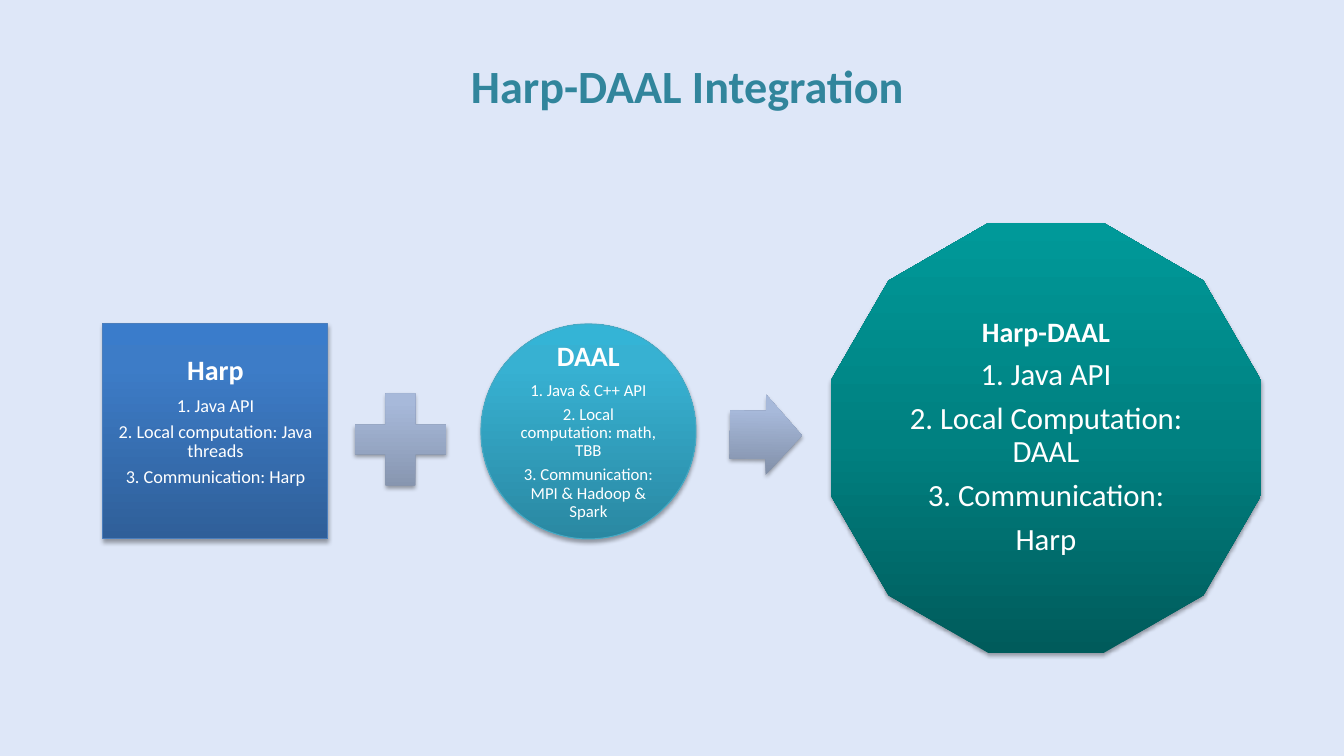
import pptx
import pptx.util
import pptx.dml.color
import pptx.enum.shapes
import pptx.enum.text
import pptx.oxml
import pptx.oxml.ns
from lxml import etree

RGB = pptx.dml.color.RGBColor
KIND = pptx.enum.shapes.MSO_SHAPE
Pt = pptx.util.Pt

# Colours
PALE = RGB(0xDE, 0xE7, 0xF8)
TEAL = RGB(0x31, 0x85, 0x9C)
WHITE = RGB(0xFF, 0xFF, 0xFF)
NAVY = RGB(0x4B, 0x7E, 0xBC)
AQUA = RGB(0x46, 0xAA, 0xC5)

# Gradient stops from bottom to top: percent, colour
BLUE = [(0, RGB(0x2F, 0x5F, 0x99)), (80, RGB(0x3D, 0x7C, 0xC7)), (100, RGB(0x3A, 0x7C, 0xCB))]
CYAN = [(0, RGB(0x2A, 0x88, 0xA2)), (80, RGB(0x37, 0xB1, 0xD2)), (100, RGB(0x34, 0xB4, 0xD6))]
GREY = [(0, RGB(0x81, 0x8F, 0xA8)), (80, RGB(0xA7, 0xB9, 0xDA)), (100, RGB(0xA7, 0xBA, 0xDC))]
GREEN = [(0, RGB(0x00, 0x5B, 0x5B)), (50, RGB(0x00, 0x81, 0x81)), (100, RGB(0x00, 0x99, 0x99))]

# Content
TITLE = "Harp-DAAL Integration"
HARP = ["Harp", "1. Java API", "2. Local computation: Java threads", "3. Communication: Harp"]
DAAL = ["DAAL", "1. Java & C++ API", "2. Local computation: math, TBB",
        "3. Communication: MPI & Hadoop & Spark"]
BOTH = ["Harp-DAAL", "1. Java API", "2. Local Computation: DAAL", "3. Communication:", "Harp"]

# Parts: kind, box in px, gradient, line colour, lines, body size, bottom inset in px
PARTS = [
    (KIND.RECTANGLE, (103, 324, 225, 215), BLUE, NAVY, HARP, 13, 22),
    (KIND.MATH_PLUS, (338, 377, 125, 125), GREY, None, [], 0, 3),
    (KIND.OVAL, (481, 324, 215, 215), CYAN, AQUA, DAAL, 12, 3),
    (KIND.RIGHT_ARROW, (730, 395, 72, 80), GREY, None, [], 0, 3),
    (KIND.DODECAGON, (831, 223, 430, 430), GREEN, None, BOTH, 22, 3),
]
HEAD = 20


def px(n):
    return round(n * 914400 / 100.8)


def write(shape, lines, sizes, color=WHITE, pad=3, foot=3, lead=0.9, gap=0.35):
    """Centred lines, the first one bold."""
    frame = shape.text_frame
    frame.word_wrap = True
    frame.vertical_anchor = pptx.enum.text.MSO_ANCHOR.MIDDLE
    frame.margin_left = frame.margin_right = frame.margin_top = px(pad)
    frame.margin_bottom = px(foot)
    for i, (line, size) in enumerate(zip(lines, sizes)):
        para = frame.add_paragraph() if i else frame.paragraphs[0]
        para.alignment = pptx.enum.text.PP_ALIGN.CENTER
        para.line_spacing = lead
        para.space_after = Pt(round(size * gap, 1))
        run = para.add_run()
        run.text = line
        run.font.name = "Calibri"
        run.font.size = Pt(size)
        run.font.bold = i == 0
        run.font.color.rgb = color


def shade(shape, stops):
    """Upward gradient with any number of stops."""
    marks = "".join(f'<a:gs pos="{at * 1000}"><a:srgbClr val="{color}"/></a:gs>'
                    for at, color in stops)
    fill = pptx.oxml.parse_xml(
        f'<a:gradFill {pptx.oxml.ns.nsdecls("a")} rotWithShape="1"><a:gsLst>{marks}</a:gsLst>'
        '<a:lin ang="16200000" scaled="0"/></a:gradFill>')
    shape.element.spPr.find(pptx.oxml.ns.qn("a:prstGeom")).addnext(fill)


def drop(shape):
    """Soft shadow below the shape."""
    qn = pptx.oxml.ns.qn
    shape.shadow.inherit = False
    effects = shape.element.spPr.find(qn("a:effectLst"))
    cast = etree.SubElement(effects, qn("a:outerShdw"), blurRad=str(Pt(3.1)),
                            dist=str(Pt(1.8)), dir="5400000", rotWithShape="0")
    tint = etree.SubElement(cast, qn("a:srgbClr"), val="000000")
    etree.SubElement(tint, qn("a:alpha"), val="35000")


def main():
    deck = pptx.Presentation()
    deck.slide_width, deck.slide_height = px(1344), px(756)
    slide = deck.slides.add_slide(deck.slide_layouts[6])
    slide.background.fill.solid()
    slide.background.fill.fore_color.rgb = PALE

    # Title
    box = slide.shapes.add_textbox(*map(px, (240, -12, 895, 194)))
    write(box, [TITLE], [33], color=TEAL, pad=5, foot=5, lead=1.0, gap=0)

    # Equation: Harp plus DAAL gives Harp-DAAL
    for kind, place, stops, edge, lines, size, foot in PARTS:
        shape = slide.shapes.add_shape(kind, *map(px, place))
        shade(shape, stops)
        if edge:
            shape.line.color.rgb = edge
            shape.line.width = Pt(0.75)
        else:
            shape.line.fill.background()
        drop(shape)
        if kind == KIND.RIGHT_ARROW:
            shape.rotation = 0.6
            shape.adjustments[0], shape.adjustments[1] = 0.6, 0.5
        if lines:
            write(shape, lines, [HEAD] + [size] * (len(lines) - 1), foot=foot)

    deck.save("out.pptx")


if __name__ == "__main__":
    main()
